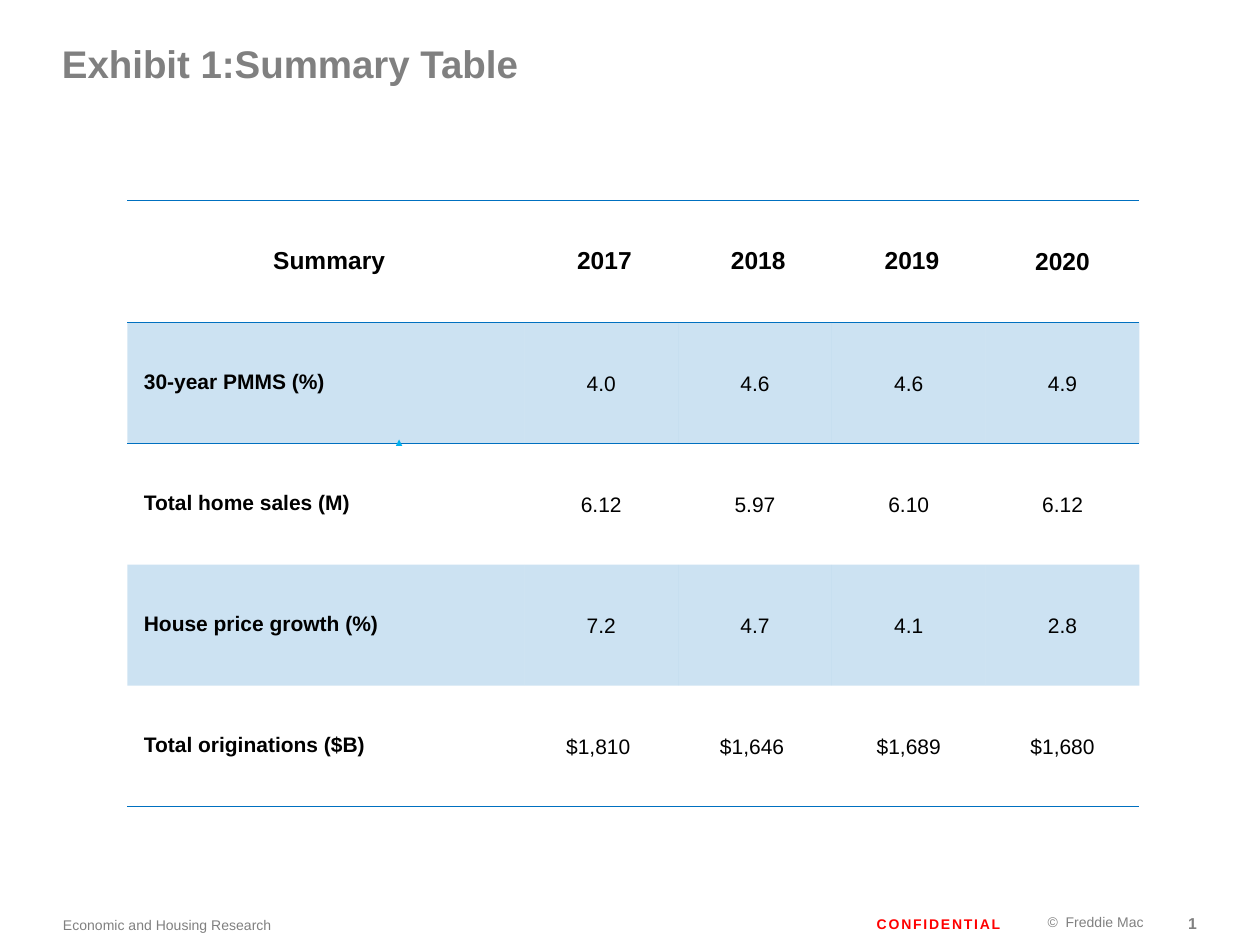
from lxml import etree
from pptx import Presentation
from pptx import util as u
from pptx.dml.color import RGBColor
from pptx.enum import shapes, text
from pptx.oxml.ns import qn

HUES = {"grey": "808080", "red": "FF0000", "black": "000000",
        "blue": "0070C0", "sky": "00B0F0"}
LEFT, MID, RIGHT = text.PP_ALIGN.LEFT, text.PP_ALIGN.CENTER, text.PP_ALIGN.RIGHT
TOP, CENTRE = text.MSO_ANCHOR.TOP, text.MSO_ANCHOR.MIDDLE


def style(para, size, hue, bold, align):
    """Set the font and alignment of a whole paragraph."""
    para.alignment = align
    font = para.font
    font.name, font.size, font.bold = "Arial", u.Pt(size), bold
    font.color.rgb = RGBColor.from_string(HUES[hue])


def rule(cell, tag, spot):
    """Draw a thin blue border on one side of a cell."""
    line = etree.Element(qn("a:" + tag), w=str(u.Pt(1)))
    fill = etree.SubElement(line, qn("a:solidFill"))
    etree.SubElement(fill, qn("a:srgbClr"), val=HUES["blue"])
    cell._tc.get_or_add_tcPr().insert(spot, line)


deck = Presentation()
deck.slide_width, deck.slide_height = u.Cm(25.4), u.Cm(19.05)
slide = deck.slides.add_slide(deck.slide_layouts[6])

# Title and footer: words, left, top, width, height, size, hue, bold, align, anchor
labels = [
    ("Exhibit 1:Summary Table", 1.25, 0.81, 17.15, 1.65, 22, "grey", True, LEFT, TOP),
    ("Economic and Housing Research", 1.27, 18.24, 11.35, 0.81, 8, "grey", False, LEFT, CENTRE),
    ("CONFIDENTIAL", 12.04, 18.24, 8.13, 0.79, 8, "red", True, RIGHT, CENTRE),
    ("©  Freddie Mac", 19.2, 18.19, 3.86, 0.81, 8, "grey", False, RIGHT, CENTRE),
    ("1", 23.29, 18.21, 0.84, 0.79, 9, "grey", True, RIGHT, CENTRE),
]
for words, left, top, wide, high, size, hue, bold, align, anchor in labels:
    box = slide.shapes.add_textbox(u.Cm(left), u.Cm(top), u.Cm(wide), u.Cm(high))
    frame = box.text_frame
    frame.word_wrap = True
    frame.vertical_anchor = anchor
    frame.margin_left = frame.margin_right = frame.margin_top = frame.margin_bottom = 0
    para = frame.paragraphs[0]
    para.text = words
    style(para, size, hue, bold, align)
    if hue == "red":
        para.runs[0]._r.get_or_add_rPr().set("spc", "100")

# Summary table
rows = [
    ("Summary", "2017", "2018", "2019", "2020"),
    ("30-year PMMS (%)", "4.0", "4.6", "4.6", "4.9"),
    ("Total home sales (M)", "6.12", "5.97", "6.10", "6.12"),
    ("House price growth (%)", "7.2", "4.7", "4.1", "2.8"),
    ("Total originations ($B)", "$1,810 ", "$1,646 ", "$1,689", "$1,680"),
]
last = len(rows) - 1
table = slide.shapes.add_table(len(rows), len(rows[0]), u.Cm(2.57), u.Cm(4.04),
                               u.Cm(20.4), u.Cm(12.2)).table
table.first_row = table.horz_banding = False
# "No Style, No Grid"
table._tbl.tblPr.find(qn("a:tableStyleId")).text = "{2D5ABB26-0587-4C30-8999-92F81FD0307C}"
for c, col in enumerate(table.columns):
    col.width = u.Cm(3.1 if c else 8)
for r, row in enumerate(table.rows):
    row.height = u.Cm(2.44 if r else 2.46)

for r, row in enumerate(rows):
    for c, words in enumerate(row):
        cell = table.cell(r, c)
        cell.vertical_anchor = CENTRE
        para = cell.text_frame.paragraphs[0]
        para.text = words
        head = r == 0
        style(para, 14 if head else 12, "black", head or c == 0,
              MID if head or c else LEFT)
        if c == 0 or (head and c < 4):
            sides = 0.2, 0.05, 0.2, 0.15
            para.line_spacing = 1.15
            para._p.get_or_add_pPr().set("marL", str(u.Cm(0.13)))
        else:
            sides = 0.03, 0.03, 0.03, 0
        (cell.margin_left, cell.margin_top,
         cell.margin_right, cell.margin_bottom) = map(u.Cm, sides)
        if r % 2:
            cell.fill.solid()
            cell.fill.fore_color.rgb = RGBColor.from_string(HUES["blue"])
            tint = cell._tc.tcPr.find(".//" + qn("a:srgbClr"))
            etree.SubElement(tint, qn("a:alpha"), val="20000")
        else:
            cell.fill.background()
        if r < 2:
            rule(cell, "lnT", 0)
        if r in (0, last):
            rule(cell, "lnB", 1 if head else 0)

# Small marker under the first data row
mark = slide.shapes.add_shape(shapes.MSO_SHAPE.ISOSCELES_TRIANGLE,
                              u.Cm(7.98), u.Cm(8.86), u.Cm(0.13), u.Cm(0.13))
mark.shadow.inherit = False
mark.fill.solid()
mark.fill.fore_color.rgb = RGBColor.from_string(HUES["sky"])
mark.line.fill.background()

deck.save("out.pptx")
